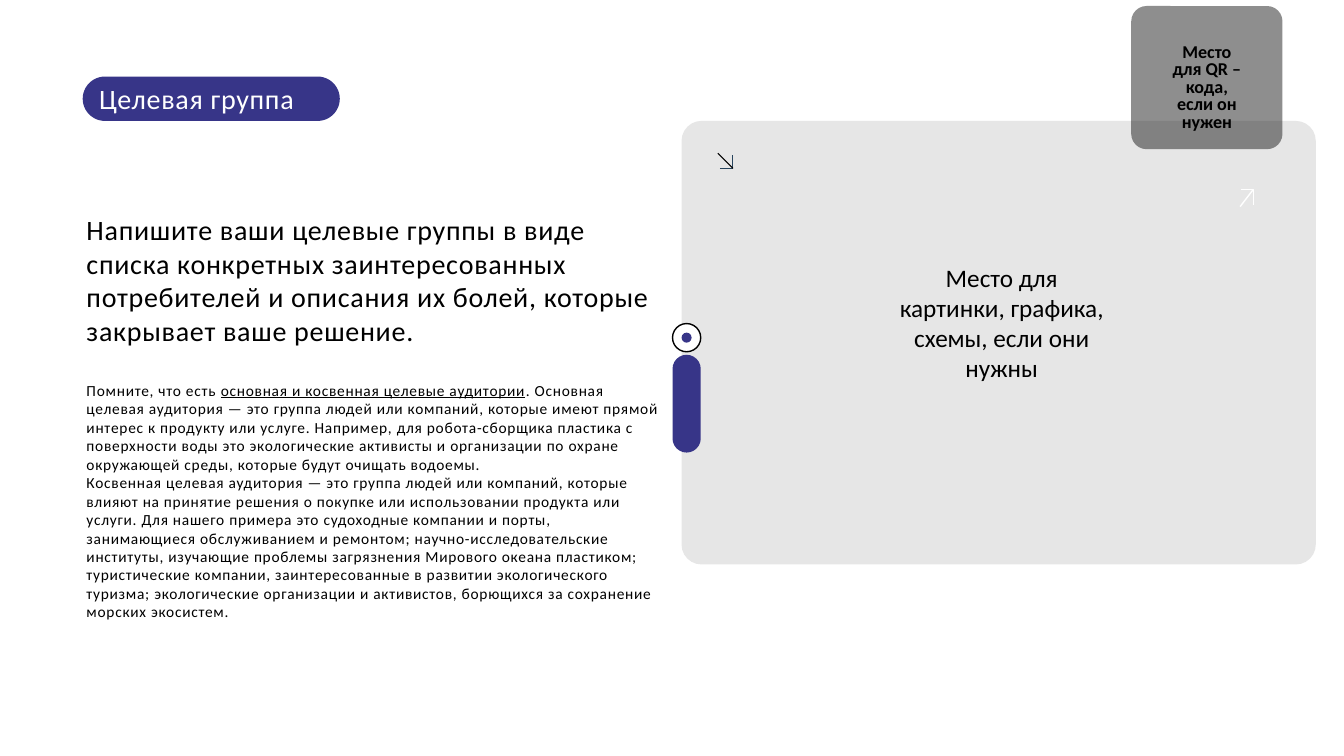
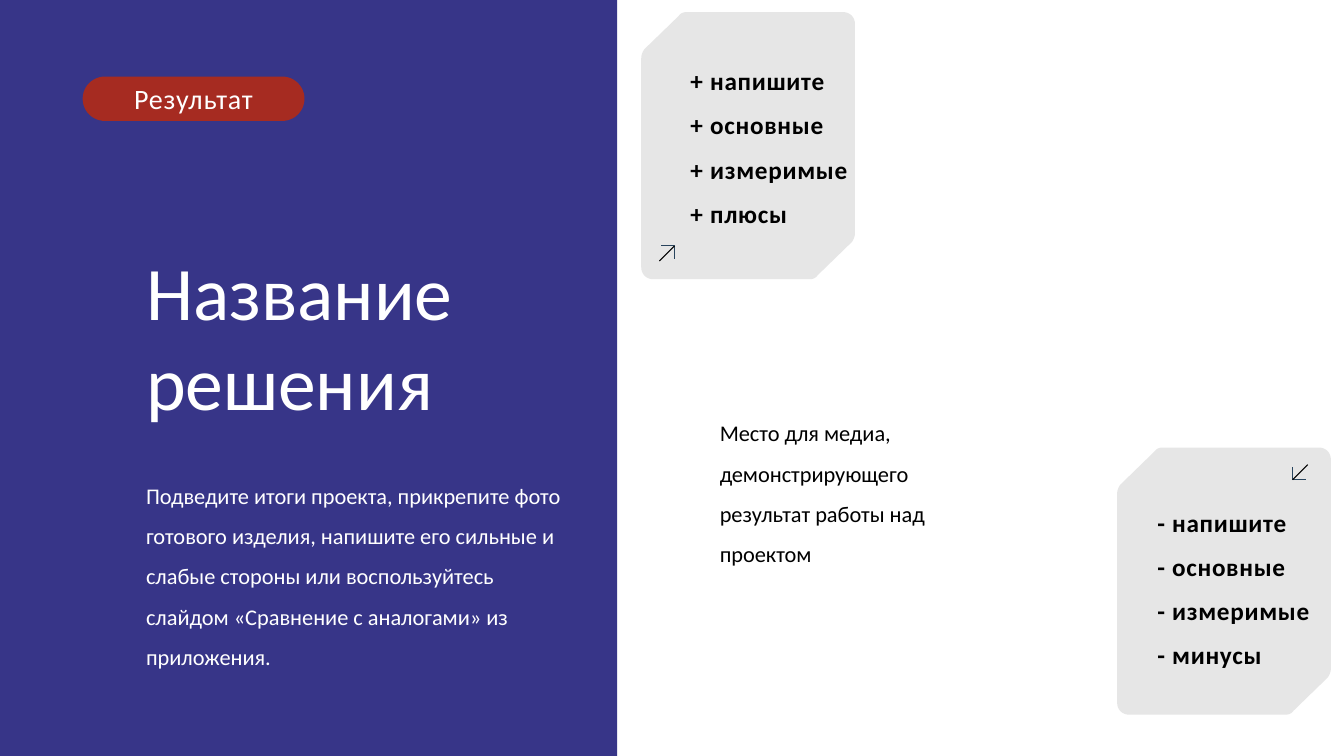
from pptx import Presentation
from pptx.dml.color import RGBColor
from pptx.enum.shapes import MSO_CONNECTOR as Link, MSO_SHAPE as Form
from pptx.enum.text import MSO_ANCHOR as Anchor, PP_ALIGN as Align
from pptx.oxml.ns import qn
from pptx.util import Inches, Pt
from lxml.etree import SubElement

FONT = "Calibri"
HUES = {"blue": "373588", "red": "A62B21", "grey": "E6E6E6", "dark": "1E1E1E",
        "steel": "28445D", "black": "000000", "white": "FFFFFF"}

LEAD = ["Напишите ваши целевые группы в виде списка конкретных заинтересованных",
        "потребителей и описания их болей, которые закрывает ваше решение."]
NOTES = [
    ("Помните, что есть ", "основная и косвенная целевые аудитории",
     ". Основная целевая аудитория — это группа людей или компаний, которые имеют "
     "прямой интерес к продукту или услуге. Например, для робота-сборщика пластика "
     "с поверхности воды это экологические активисты и организации по охране "
     "окружающей среды, которые будут очищать водоемы."),
    "Косвенная целевая аудитория — это группа людей или компаний, которые влияют на "
    "принятие решения о покупке или использовании продукта или услуги. Для нашего "
    "примера это судоходные компании и порты, занимающиеся обслуживанием и ремонтом; "
    "научно-исследовательские институты, изучающие проблемы загрязнения Мирового "
    "океана пластиком; туристические компании, заинтересованные в развитии "
    "экологического туризма; экологические организации и активистов, борющихся за "
    "сохранение морских экосистем."]
CODE = "Место для QR –кода, если он нужен"
IMAGE = "Место для картинки, графика, схемы, если они нужны"
NAME = ["Название", "решения"]
RECAP = ("Подведите итоги проекта, прикрепите фото готового изделия, напишите его "
         "сильные и слабые стороны или воспользуйтесь слайдом «Сравнение с аналогами» "
         "из приложения.")
MEDIA = "Место для медиа, демонстрирующего результат работы над проектом"
CARDS = [
    {"at": (6.36, 0.12), "text": (6.75, 0.6), "sign": "+", "last": "плюсы"},
    {"at": (11.08, 4.44), "text": (11.38, 4.98), "sign": "-", "last": "минусы"}]
WORDS = ["напишите", "основные", "измеримые"]

CARD_W, CARD_H = 2.12, 2.65
HALF = [[(2.12, 0.12)],
        [(2.12, 2.19), (2.12, 2.22), (2.11, 2.25), (2.09, 2.28)],
        [(1.75, 2.61), (1.73, 2.64), (1.7, 2.65), (1.67, 2.65)],
        [(0.12, 2.65), (0.05, 2.65), (0, 2.6), (0, 2.53)]]


def color(name):
    return RGBColor.from_string(HUES[name])


def paint(shape, fill=None, line=None, width=1):
    shape.shadow.inherit = False
    if fill:
        shape.fill.solid()
        shape.fill.fore_color.rgb = color(fill)
    else:
        shape.fill.background()
    if line:
        shape.line.color.rgb = color(line)
        shape.line.width = Pt(width)
    else:
        shape.line.fill.background()
    return shape


def block(slide, box, fill, round=0.5, line=None):
    form = Form.ROUNDED_RECTANGLE if round else Form.RECTANGLE
    shape = slide.shapes.add_shape(form, *map(Inches, box))
    if round:
        shape.adjustments[0] = round
    return paint(shape, fill, line)


def write(shape, rows, size, hue="black", bold=False, track=0, align=Align.LEFT,
          lead=None, gap=None):
    frame = shape.text_frame
    frame.word_wrap = True
    for row in rows:
        used = frame.paragraphs[-1].runs
        para = frame.add_paragraph() if used else frame.paragraphs[0]
        para.alignment = align
        if lead:
            para.line_spacing = lead
        if gap:
            para.space_before = Pt(gap)
        for i, part in enumerate([row] if isinstance(row, str) else row):
            run = para.add_run()
            run.text = part
            font = run.font
            font.name, font.size, font.bold = FONT, Pt(size), bold
            font.color.rgb = color(hue)
            if i % 2:
                font.underline = True
            if track:
                font._element.set("spc", str(track))


def label(slide, box, rows, size, anchor=Anchor.TOP, **style):
    shape = slide.shapes.add_textbox(*map(Inches, box))
    shape.text_frame.vertical_anchor = anchor
    write(shape, rows, size, **style)
    return shape


def title(slide, text, width, fill, align):
    pill = block(slide, (0.82, 0.76, width, 0.44), fill)
    pill.text_frame.vertical_anchor = Anchor.MIDDLE
    write(pill, [text], 20, "white", track=50, align=align)


def trace(slide, dots, close):
    dots = [(Inches(x), Inches(y)) for x, y in dots]
    pen = slide.shapes.build_freeform(*dots[0])
    pen.add_line_segments(dots[1:], close=close)
    return pen.convert_to_shape()


def arrow(slide, tip, head, tail, hues=("steel", "black"), width=0.75):
    x, y = tip
    dots = [(x + head[0], y), tip, (x, y + head[1])]
    paint(trace(slide, dots, False), None, hues[0], width)
    ends = x + tail[0], y + tail[1], x, y
    stem = slide.shapes.add_connector(Link.STRAIGHT, *map(Inches, ends))
    stem.line.color.rgb = color(hues[1])
    stem.line.width = Pt(width)
    SubElement(stem._element.spPr, qn("a:effectLst"))


def curve(knots, steps=8):
    if len(knots) == 1:
        return knots
    dots = []
    for i in range(steps + 1):
        t = i / steps
        parts = (1 - t) ** 3, 3 * t * (1 - t) ** 2, 3 * t * t * (1 - t), t ** 3
        dots.append(tuple(sum(p * k[n] for p, k in zip(parts, knots)) for n in (0, 1)))
    return dots


def card(slide, left, top):
    half = [dot for knots in HALF for dot in curve(knots)]
    dots = half + [(CARD_W - x, CARD_H - y) for x, y in half]
    paint(trace(slide, [(left + x, top + y) for x, y in dots], True), "grey")


def target(slide):
    body = label(slide, (0.76, 2.06, 5.9, 4.19), LEAD, 20, track=50)
    write(body, NOTES, 11, track=50)
    body.text_frame.paragraphs[len(LEAD)].space_before = Pt(24)
    title(slide, "Целевая группа", 2.55, "blue", Align.LEFT)
    block(slide, (6.76, 1.2, 6.29, 4.4), "grey", 0.045)
    code = block(slide, (11.22, 0.06, 1.5, 1.42), "dark", 0.107)
    tone = code._element.spPr.find(qn("a:solidFill"))[0]
    SubElement(tone, qn("a:alpha")).set("val", "50000")
    label(slide, (11.5, 0.36, 0.94, 1.03), [CODE], 12.9, Anchor.MIDDLE,
          bold=True, align=Align.CENTER, lead=0.8)
    arrow(slide, (12.43, 1.88), (-0.12, 0.15), (-0.13, 0.17), ("white", "white"), 1)
    arrow(slide, (7.27, 1.67), (-0.13, -0.13), (-0.15, -0.15))
    block(slide, (6.67, 3.52, 0.28, 0.97), "blue")
    block(slide, (6.67, 3.21, 0.28, 0.28), "white", line="black")
    block(slide, (6.76, 3.3, 0.1, 0.1), "blue")
    label(slide, (8.74, 2.55, 2.39, 1.31), [IMAGE], 18, align=Align.CENTER)


def result(slide):
    block(slide, (0, 0, 6.12, 7.5), "blue", 0)
    title(slide, "Результат", 2.2, "red", Align.CENTER)
    for item in CARDS:
        card(slide, *item["at"])
    label(slide, (1.35, 1.89, 4.45, 2.87), NAME, 54, Anchor.MIDDLE, hue="white")
    label(slide, (1.35, 4.6, 4.32, 1.17), [RECAP], 16, hue="white", lead=1.5, gap=10)
    label(slide, (7.04, 3.98, 2.49, 2), [MEDIA], 16, lead=1.5, gap=10)
    arrow(slide, (12.82, 4.76), (0.13, -0.13), (0.15, -0.15))
    arrow(slide, (6.69, 2.44), (-0.13, 0.13), (-0.15, 0.15))
    for item in CARDS:
        rows = [f"{item['sign']} {word}" for word in WORDS + [item["last"]]]
        label(slide, (*item["text"], 1.79, 1.58), rows, 18, bold=True, track=50, gap=10)


def main():
    deck = Presentation()
    deck.slide_width, deck.slide_height = Inches(13.33), Inches(7.5)
    for draw in (target, result):
        draw(deck.slides.add_slide(deck.slide_layouts[6]))
    deck.save("out.pptx")


if __name__ == "__main__":
    main()
